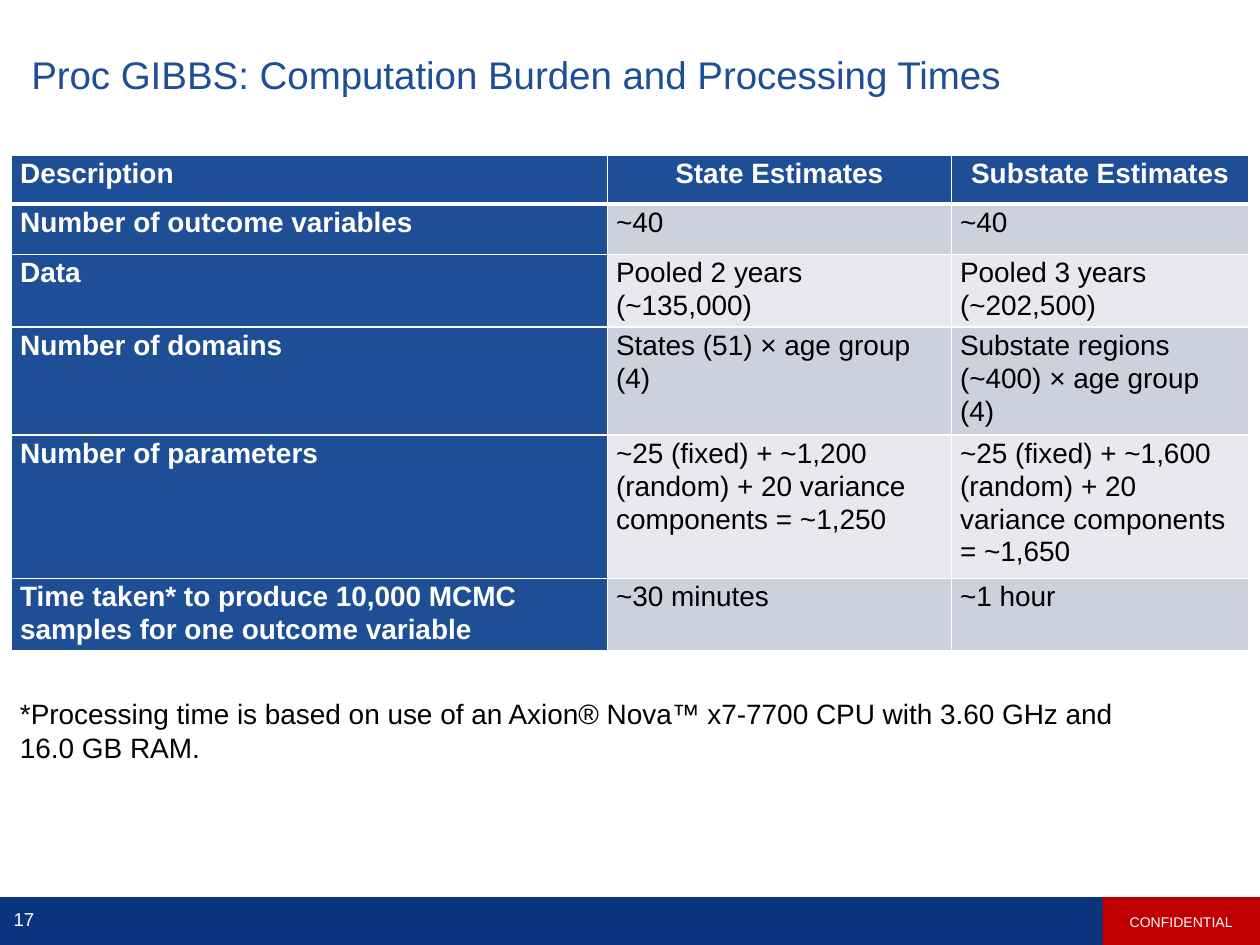
from dataclasses import dataclass

from lxml import etree
from pptx import Presentation
from pptx.dml.color import RGBColor
from pptx.enum.shapes import MSO_SHAPE
from pptx.enum.text import MSO_ANCHOR, PP_ALIGN
from pptx.oxml.ns import qn
from pptx.util import Inches, Pt

RECTANGLE = MSO_SHAPE.RECTANGLE
TOP, MIDDLE = MSO_ANCHOR.TOP, MSO_ANCHOR.MIDDLE
LEFT, CENTER, JUSTIFY = PP_ALIGN.LEFT, PP_ALIGN.CENTER, PP_ALIGN.JUSTIFY

WHITE = RGBColor(0xFF, 0xFF, 0xFF)
BLACK = RGBColor(0x00, 0x00, 0x00)
BLUE = RGBColor(0x1E, 0x4E, 0x96)
NAVY = RGBColor(0x0A, 0x35, 0x7E)
RED = RGBColor(0xC0, 0x00, 0x00)
DARK_BAND = RGBColor(0xCD, 0xD0, 0xDD)
LIGHT_BAND = RGBColor(0xE8, 0xE9, 0xEF)

FONT = "Arial"
COLUMN_WIDTHS = (4.73, 2.73, 2.36)
ROW_HEIGHTS = (0.39, 0.4, 0.52, 0.79, 1.04, 0.55)
ROWS = (
    ("Description", "State Estimates", "Substate Estimates"),
    ("Number of outcome variables", "~40", "~40"),
    ("Data", "Pooled 2 years (~135,000)", "Pooled 3 years (~202,500)"),
    ("Number of domains", "States (51) × age group (4)",
     "Substate regions (~400) × age group (4)"),
    ("Number of parameters",
     "~25 (fixed) + ~1,200 (random) + 20 variance components = ~1,250",
     "~25 (fixed) + ~1,600 (random) + 20 variance components = ~1,650"),
    ("Time taken* to produce 10,000 MCMC samples for one outcome variable",
     "~30 minutes", "~1 hour"),
)


@dataclass(frozen=True)
class Area:
    left: float
    top: float
    width: float
    height: float

    def lengths(self) -> tuple:
        return tuple(Inches(n) for n in (self.left, self.top, self.width, self.height))


@dataclass(frozen=True)
class TextStyle:
    size: float
    color: RGBColor
    bold: bool = False
    align: PP_ALIGN = LEFT
    line_spacing: float = 1.0


@dataclass(frozen=True)
class Label:
    text: str
    area: Area
    style: TextStyle
    anchor: MSO_ANCHOR = MIDDLE
    insets: tuple = (0.1, 0.05, 0.1, 0.05)


def write(frame, text: str, style: TextStyle) -> None:
    para = frame.paragraphs[0]
    para.alignment = style.align
    para.line_spacing = style.line_spacing
    span = para.add_run()
    span.text = text
    span.font.name = FONT
    span.font.size = Pt(style.size)
    span.font.bold = style.bold
    span.font.color.rgb = style.color


def set_insets(target, insets: tuple) -> None:
    (target.margin_left, target.margin_top,
     target.margin_right, target.margin_bottom) = (Inches(n) for n in insets)


def add_label(page, label: Label) -> None:
    frame = page.shapes.add_textbox(*label.area.lengths()).text_frame
    frame.word_wrap = True
    frame.vertical_anchor = label.anchor
    set_insets(frame, label.insets)
    write(frame, label.text, label.style)


def add_bar(page, area: Area, color: RGBColor):
    bar = page.shapes.add_shape(RECTANGLE, *area.lengths())
    bar.shadow.inherit = False
    bar.fill.solid()
    bar.fill.fore_color.rgb = color
    bar.line.fill.background()
    return bar


def add_border(cell, side: str, points: float) -> None:
    properties = cell._tc.get_or_add_tcPr()
    line = etree.SubElement(properties, qn(f"a:ln{side}"), w=str(Pt(points)))
    fill = etree.SubElement(line, qn("a:solidFill"))
    etree.SubElement(fill, qn("a:srgbClr"), val=str(WHITE))


def style_cell(cell, text: str, row: int, column: int) -> None:
    heading = row == 0 or column == 0
    align = LEFT if row else (CENTER if column else JUSTIFY)
    set_insets(cell, (0.07, 0.01, 0.07, 0))
    cell.vertical_anchor = TOP
    # The rule below the heading row is thicker than the others
    for side, thick in (("L", False), ("R", False), ("T", row == 1), ("B", row == 0)):
        add_border(cell, side, 3 if thick else 1)
    cell.fill.solid()
    band = DARK_BAND if row % 2 else LIGHT_BAND
    cell.fill.fore_color.rgb = BLUE if heading else band
    color = WHITE if heading else BLACK
    write(cell.text_frame, text, TextStyle(16, color, heading, align, 1.06))


def add_burden_table(page) -> None:
    area = Area(0.09, 1.23, sum(COLUMN_WIDTHS), sum(ROW_HEIGHTS))
    table = page.shapes.add_table(len(ROWS), len(COLUMN_WIDTHS), *area.lengths()).table
    for column, width in zip(table.columns, COLUMN_WIDTHS):
        column.width = Inches(width)
    for row, height in zip(table.rows, ROW_HEIGHTS):
        row.height = Inches(height)
    for row, texts in enumerate(ROWS):
        for column, text in enumerate(texts):
            style_cell(table.cell(row, column), text, row, column)


def main() -> None:
    deck = Presentation()
    deck.slide_width, deck.slide_height = Inches(10), Inches(7.5)
    page = deck.slides.add_slide(deck.slide_layouts[6])

    # Footer bar
    add_bar(page, Area(0, 7.12, 10, 0.39), NAVY)

    # Title
    add_label(page, Label("Proc GIBBS: Computation Burden and Processing Times",
                          Area(0.15, 0.2, 9.67, 0.83),
                          TextStyle(22, BLUE, line_spacing=0.9),
                          insets=(0.1, 0.1, 0.2, 0.1)))

    # Table and footnote
    add_burden_table(page)
    add_label(page, Label("*Processing time is based on use of an Axion® Nova™ x7-7700 "
                          "CPU with 3.60 GHz and 16.0 GB RAM.",
                          Area(0.06, 5.46, 8.89, 0.94), TextStyle(16, BLACK), TOP,
                          (0.1, 0.07, 0.1, 0.05)))

    # Confidentiality tag and page number
    tag = add_bar(page, Area(8.75, 7.12, 1.25, 0.39), RED)
    tag.text_frame.vertical_anchor = MIDDLE
    write(tag.text_frame, "CONFIDENTIAL", TextStyle(8, WHITE, align=CENTER))
    add_label(page, Label("17", Area(0, 7.13, 0.38, 0.32),
                          TextStyle(10.7, WHITE, align=CENTER)))

    deck.save("out.pptx")


if __name__ == "__main__":
    main()
